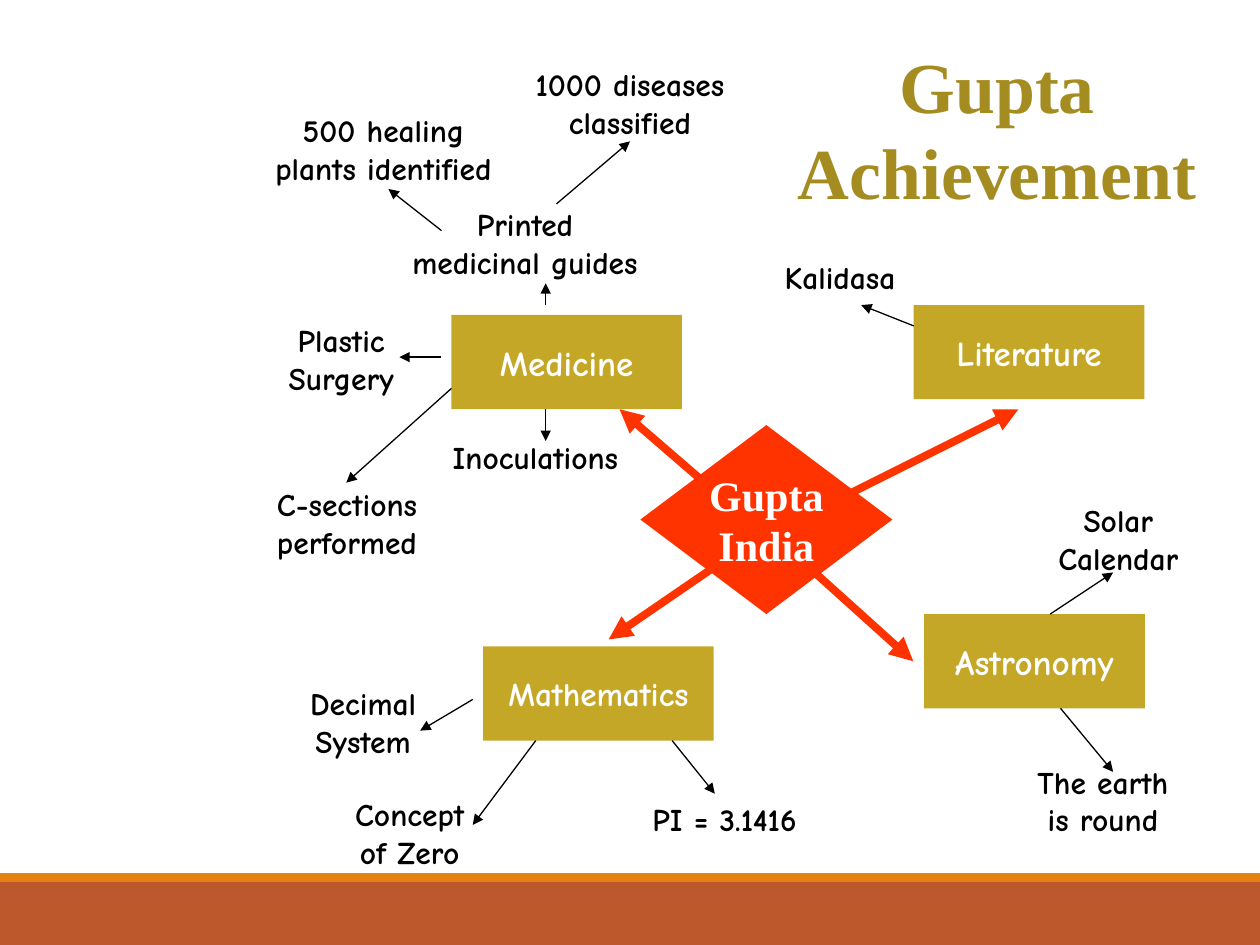
from lxml.etree import SubElement
from pptx import Presentation
from pptx.dml.color import RGBColor
from pptx.enum.shapes import MSO_CONNECTOR, MSO_SHAPE
from pptx.enum.text import MSO_ANCHOR, MSO_AUTO_SIZE, PP_ALIGN
from pptx.oxml.ns import qn
from pptx.util import Cm, Pt

GOLD = RGBColor(0xC5, 0xA7, 0x27)
OLIVE = RGBColor(0xA5, 0x8C, 0x21)
RED = RGBColor(0xFF, 0x33, 0x00)
RUST = RGBColor(0xBD, 0x58, 0x2C)
AMBER = RGBColor(0xE4, 0x83, 0x12)
BLACK = RGBColor(0, 0, 0)
WHITE = RGBColor(0xFF, 0xFF, 0xFF)
COMIC, TIMES = "Comic Neue", "Times New Roman"
WIDE, HIGH = 25.4, 19.05

# Each topic: name, text size, box (left, top, width, height) and notes.
# Each note: text, offset and width, then arrow start and end,
# all measured in cm from the top left corner of the topic's box.
TOPICS = [
    ("Medicine", 20, (9.1, 6.35, 4.65, 1.9), [
        ("Printed\nmedicinal guides", (-1.69, -2.34, 6.35), (1.9, -0.2), (1.9, -0.64)),
        ("1000 diseases\nclassified", (0.85, -5.16, 5.5), (2.12, -2.24), (3.6, -3.5)),
        ("500 healing\nplants identified", (-4.22, -4.23, 5.7), (-0.2, -1.7), (-1.27, -2.54)),
        ("Plastic\nSurgery", (-4.02, 0, 3.6), (-0.2, 0.85), (-1.05, 0.85)),
        ("C-sections\nperformed", (-4.22, 3.3, 4.23), (0, 1.48), (-2.12, 3.38)),
        ("Inoculations", (-0.42, 2.36, 4.23), (1.9, 1.9), (1.9, 2.54)),
    ]),
    ("Literature", 20, (18.42, 6.15, 4.65, 1.9), [
        ("Kalidasa", (-3.18, -1.07, 3.39), (0, 0.42), (-1.06, 0)),
    ]),
    ("Mathematics", 19, (9.74, 13.03, 4.65, 1.9), [
        ("Decimal\nSystem", (-4.22, 0.64, 3.6), (-0.21, 1.07), (-1.27, 1.7)),
        ("Concept\nof Zero", (-3.28, 2.87, 3.6), (1.06, 1.9), (-0.21, 3.6)),
        ("PI = 3.1416", (2.54, 2.97, 4.65), (3.81, 1.9), (4.67, 2.97)),
    ]),
    ("Astronomy", 20, (18.63, 12.38, 4.45, 1.9), [
        ("Solar\nCalendar", (1.48, -2.41, 4.87), (2.54, 0), (3.81, -0.84)),
        ("The earth\nis round", (1.7, 2.87, 3.81), (2.75, 1.9), (3.81, 3.18)),
    ]),
]
SPOKES = [
    ((1.27, 1.14), (-0.42, -0.32)),
    ((4.24, 1.37), (7.62, -0.32)),
    ((3.39, 2.86), (5.5, 4.76)),
    ((1.49, 2.86), (-0.64, 4.32)),
]


def write(shape, text, font=COMIC, size=18, color=BLACK,
          anchor=MSO_ANCHOR.MIDDLE, wrap=True):
    """Fill a shape with one centred bold paragraph."""
    frame = shape.text_frame
    frame.word_wrap = wrap
    frame.auto_size = MSO_AUTO_SIZE.NONE
    frame.vertical_anchor = anchor
    para = frame.paragraphs[0]
    para.text = text
    para.alignment = PP_ALIGN.CENTER
    para.line_spacing = 1.0
    para.space_before = Pt(0)
    for run in para.runs:
        run.font.name = font
        run.font.size = Pt(size)
        run.font.bold = True
        run.font.color.rgb = color


def block(slide, kind, box, fill):
    shape = slide.shapes.add_shape(kind, *map(Cm, box))
    shape.shadow.inherit = False
    shape.fill.solid()
    shape.fill.fore_color.rgb = fill
    shape.line.fill.background()
    return shape


def arrow(slide, box, start, end, color=BLACK, width=0.75):
    """Draw an arrow between two points relative to the box."""
    left, top = box[:2]
    line = slide.shapes.add_connector(
        MSO_CONNECTOR.STRAIGHT,
        Cm(left + start[0]), Cm(top + start[1]),
        Cm(left + end[0]), Cm(top + end[1]))
    line.line.color.rgb = color
    line.line.width = Pt(width)
    SubElement(line.line._get_or_add_ln(), qn("a:tailEnd"), type="triangle")
    SubElement(line._element.spPr, qn("a:effectLst"))


def footer(slide, box):
    left, top, width, height = box
    block(slide, MSO_SHAPE.RECTANGLE, (left, top + 0.18, width, height - 0.18), RUST)
    block(slide, MSO_SHAPE.RECTANGLE, (left, top, width, 0.18), AMBER)


def heading(slide, box):
    title = slide.shapes.title
    title.left, title.top, title.width, title.height = map(Cm, box)
    write(title, "Gupta Achievement", font=TIMES, size=41, color=OLIVE)
    # Grey text shadow, down and to the right
    props = title.text_frame.paragraphs[0].runs[0].font._element
    effects = props.makeelement(qn("a:effectLst"), {})
    shade = SubElement(effects, qn("a:outerShdw"), dist="38100", dir="2700000")
    SubElement(shade, qn("a:srgbClr"), val="808080")
    props.find(qn("a:solidFill")).addnext(effects)


def topic(slide, box, name, size, notes):
    shape = block(slide, MSO_SHAPE.RECTANGLE, box, GOLD)
    write(shape, name, size=size, color=WHITE, wrap=False)
    for text, (x, y, width), start, end in notes:
        height = 2.03 if "\n" in text else 1.14
        label = slide.shapes.add_textbox(
            Cm(box[0] + x), Cm(box[1] + y), Cm(width), Cm(height))
        write(label, text, anchor=MSO_ANCHOR.TOP)
        arrow(slide, box, start, end)


def hub(slide, box):
    # Spokes go first so the diamond covers their ends
    for start, end in SPOKES:
        arrow(slide, box, start, end, color=RED, width=4.5)
    shape = block(slide, MSO_SHAPE.DIAMOND, box, RED)
    write(shape, "Gupta\nIndia", font=TIMES, size=24, color=WHITE, wrap=False)


def main():
    deck = Presentation()
    deck.slide_width, deck.slide_height = Cm(WIDE), Cm(HIGH)
    slide = deck.slides.add_slide(deck.slide_layouts[5])
    footer(slide, (0, 17.6, WIDE, HIGH - 17.6))
    for name, size, box, notes in TOPICS:
        topic(slide, box, name, size, notes)
    hub(slide, (12.91, 8.57, 5.08, 3.81))
    heading(slide, (15.24, 0.64, 9.73, 3.86))
    deck.save("out.pptx")


if __name__ == "__main__":
    main()
